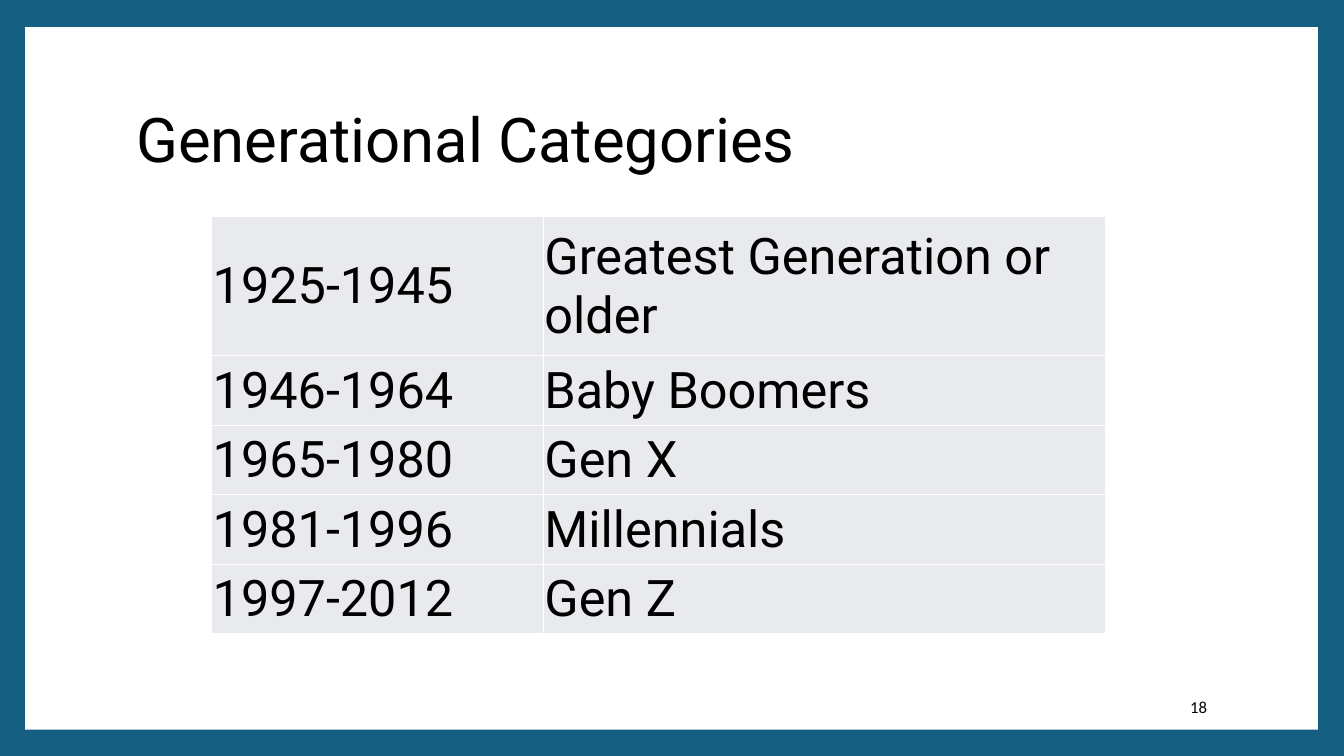
from dataclasses import dataclass

from lxml.etree import SubElement
from pptx import Presentation
from pptx.dml.color import RGBColor as Color
from pptx.enum.shapes import MSO_SHAPE as Shape
from pptx.enum.text import MSO_ANCHOR as Anchor, PP_ALIGN as Align
from pptx.oxml.ns import qn
from pptx.util import Inches, Pt

GENERATIONS = [
    ("1925-1945", "Greatest Generation or older"),
    ("1946-1964", "Baby Boomers"),
    ("1965-1980", "Gen X"),
    ("1981-1996", "Millennials"),
    ("1997-2012", "Gen Z"),
]
COLUMN_WIDTHS = (3.29, 5.58)
ROW_HEIGHT = 0.69


@dataclass(frozen=True)
class Theme:
    frame: str = "156082"
    paper: str = "FFFFFF"
    band: str = "E8EAED"
    ink: str = "000000"
    font: str = "Roboto"
    number_font: str = "Calibri"
    title_size: int = 44
    table_size: int = 36
    number_size: int = 12


THEME = Theme()


def apply_format(target, values):
    for name, value in values.items():
        setattr(target, name, value)


def paint(fill, color):
    fill.solid()
    fill.fore_color.rgb = Color.from_string(color)


def write(frame, text, size, font=THEME.font, **paragraph_format):
    frame.word_wrap = True
    frame.vertical_anchor = Anchor.MIDDLE
    paragraph = frame.paragraphs[0]
    apply_format(paragraph, {"alignment": Align.LEFT, **paragraph_format})
    run = paragraph.add_run()
    run.text = text
    apply_format(run.font, {"name": font, "size": Pt(size), "bold": False})
    run.font.color.rgb = Color.from_string(THEME.ink)


def add_panel(slide, left, top, width, height):
    panel = slide.shapes.add_shape(Shape.RECTANGLE, left, top, width, height)
    panel.shadow.inherit = False
    paint(panel.fill, THEME.paper)
    panel.line.fill.background()
    # Send the panel behind the title
    panel.element.getparent().insert(2, panel.element)


def set_title(slide, text, **place):
    title = slide.shapes.title
    apply_format(title, place)
    write(title.text_frame, text, THEME.title_size, line_spacing=0.9)


def add_borders(cell):
    properties = cell._tc.get_or_add_tcPr()
    for index, side in enumerate(("lnL", "lnR", "lnT", "lnB")):
        border = SubElement(properties, qn(f"a:{side}"), w=str(Pt(1)))
        fill = SubElement(border, qn("a:solidFill"))
        SubElement(fill, qn("a:srgbClr"), val=THEME.paper)
        properties.insert(index, border)


def add_generation_table(slide, left, top):
    # The first row holds two lines of text
    heights = [2 * ROW_HEIGHT] + [ROW_HEIGHT] * (len(GENERATIONS) - 1)
    table = slide.shapes.add_table(
        len(GENERATIONS), len(COLUMN_WIDTHS), left, top,
        Inches(sum(COLUMN_WIDTHS)), Inches(sum(heights))).table
    apply_format(table, {"first_row": False, "horz_banding": False})
    for column, width in zip(table.columns, COLUMN_WIDTHS):
        column.width = Inches(width)
    edge = Inches(0.01)
    margins = {"margin_left": edge, "margin_right": edge,
               "margin_top": edge, "margin_bottom": 0}
    for row, height, entries in zip(table.rows, heights, GENERATIONS):
        row.height = Inches(height)
        for cell, entry in zip(row.cells, entries):
            apply_format(cell, {**margins, "vertical_anchor": Anchor.MIDDLE})
            paint(cell.fill, THEME.band)
            add_borders(cell)
            write(cell.text_frame, entry, THEME.table_size)


def add_page_number(slide, number, left, top, width, height):
    box = slide.shapes.add_textbox(left, top, width, height)
    write(box.text_frame, number, THEME.number_size, THEME.number_font,
          alignment=Align.RIGHT)


def main():
    deck = Presentation()
    apply_format(deck, {"slide_width": Inches(13.33),
                        "slide_height": Inches(7.5)})
    slide = deck.slides.add_slide(deck.slide_layouts[5])

    # Coloured frame around a white panel
    paint(slide.background.fill, THEME.frame)
    add_panel(slide, Inches(0.25), Inches(0.27), Inches(12.82), Inches(6.97))

    # Content
    set_title(slide, "Generational Categories", left=Inches(1.25),
              top=Inches(0.67), width=Inches(10.8), height=Inches(1.48))
    add_generation_table(slide, Inches(2.1), Inches(2.15))
    add_page_number(slide, "18", Inches(10.2), Inches(6.81),
                    Inches(1.87), Inches(0.4))
    deck.save("out.pptx")


if __name__ == "__main__":
    main()
